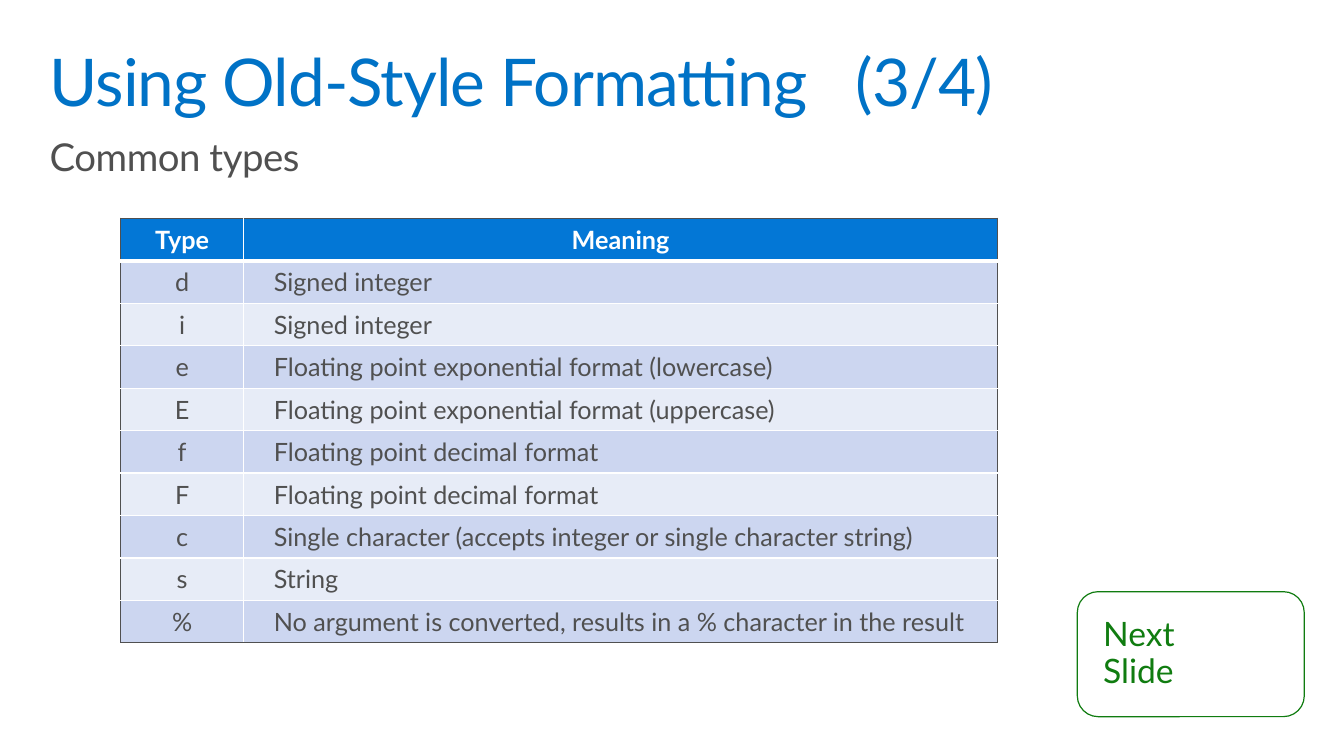
from lxml.etree import SubElement
from pptx import Presentation
from pptx.dml.color import RGBColor
from pptx.enum.shapes import MSO_SHAPE as Shape
from pptx.enum.text import MSO_ANCHOR as Anchor, MSO_AUTO_SIZE as AutoSize, PP_ALIGN as Align
from pptx.oxml.ns import qn
from pptx.util import Cm, Pt

WHITE, GREY, BLUE, GREEN = "FFFFFF", "505050", "0072C6", "107C10"
HEADER, BANDS = "0377D6", ("CCD6F0", "E7ECF7")

TYPES = [
    ("Type", "Meaning"),
    ("d", "Signed integer"),
    ("i", "Signed integer"),
    ("e", "Floating point exponential format (lowercase)"),
    ("E", "Floating point exponential format (uppercase)"),
    ("f", "Floating point decimal format"),
    ("F", "Floating point decimal format"),
    ("c", "Single character (accepts integer or single character string)"),
    ("s", "String"),
    ("%", "No argument is converted, results in a % character in the result"),
]


def colour(code):
    return RGBColor.from_string(code)


def apply(target, **values):
    for name, value in values.items():
        setattr(target, name, value)


class SlideBuilder:
    font = "Lato"

    def __init__(self, page):
        self.page = page

    def add_text(self, para, text, size, code, bold=False, spacing=None):
        para.text = text
        for span in para.runs:
            apply(span.font, name=self.font, size=Pt(size), bold=bold)
            span.font.color.rgb = colour(code)
            if spacing is not None:
                span._r.get_or_add_rPr().set("spc", str(spacing))

    def frame(self, box, side, edge, anchor):
        apply(box.text_frame, word_wrap=True, auto_size=AutoSize.NONE, vertical_anchor=anchor,
              margin_left=Cm(side), margin_right=Cm(side),
              margin_top=Cm(edge), margin_bottom=Cm(edge))
        para = box.text_frame.paragraphs[0]
        apply(para, alignment=Align.LEFT, line_spacing=0.9, space_before=Pt(0))
        return para

    def placeholder(self, box, top, text, size, code, spacing, tab=None):
        apply(box, left=Cm(1), top=Cm(top), width=Cm(31.88), height=Cm(2.24))
        para = self.frame(box, 0.25, 0.25, Anchor.TOP)
        props = para._p.get_or_add_pPr()
        props.set("marL", "0")
        props.set("indent", "0")
        SubElement(props, qn("a:buNone"))
        if tab:
            tabs = SubElement(props, qn("a:tabLst"))
            SubElement(tabs, qn("a:tab"), pos=str(Cm(tab)), algn="r")
        self.add_text(para, text, size, code, spacing=spacing)

    def border(self, cell, side, code, width):
        line = SubElement(cell._tc.get_or_add_tcPr(), qn(f"a:ln{side}"), w=str(Pt(width)))
        SubElement(SubElement(line, qn("a:solidFill")), qn("a:srgbClr"), val=code)

    def table(self, rows, left, top, widths, row_height):
        grid = self.page.shapes.add_table(len(rows), len(widths), Cm(left), Cm(top),
                                          Cm(sum(widths)), Cm(row_height * len(rows))).table
        grid.horz_banding = False
        for column, width in zip(grid.columns, widths):
            column.width = Cm(width)
        last_row, last_col = len(rows) - 1, len(widths) - 1
        for r, texts in enumerate(rows):
            grid.rows[r].height = Cm(row_height)
            for c, text in enumerate(texts):
                cell, head = grid.cell(r, c), r == 0
                apply(cell, vertical_anchor=Anchor.MIDDLE, margin_left=Cm(0.76),
                      margin_right=Cm(0.76), margin_top=Cm(0.15), margin_bottom=Cm(0.15))
                # Grey outer edges, white inner lines, thick line around the header's base
                outer = {"L": c == 0, "R": c == last_col, "T": head, "B": r == last_row}
                for side, is_outer in outer.items():
                    thick = (side == "B" and head) or (side == "T" and r == 1)
                    self.border(cell, side, GREY if is_outer else WHITE, 3 if thick else 1)
                cell.fill.solid()
                cell.fill.fore_color.rgb = colour(HEADER if head else BANDS[(r - 1) % 2])
                para = cell.text_frame.paragraphs[0]
                para.alignment = Align.CENTER if head or c == 0 else Align.LEFT
                self.add_text(para, text, 18, WHITE if head else GREY, bold=head)

    def button(self, left, top, width, height, text):
        box = self.page.shapes.add_shape(Shape.ROUNDED_RECTANGLE, Cm(left), Cm(top),
                                         Cm(width), Cm(height))
        box.shadow.inherit = False
        box.fill.solid()
        box.fill.fore_color.rgb = colour(WHITE)
        box.line.color.rgb = colour(GREEN)
        box.line.width = Pt(0.85)
        self.add_text(self.frame(box, 0.5, 0.4, Anchor.MIDDLE), text, 24, GREEN)


def main():
    deck = Presentation()
    apply(deck, slide_width=Cm(33.87), slide_height=Cm(19.05))
    page = deck.slides.add_slide(deck.slide_layouts[1])
    builder = SlideBuilder(page)

    # Title and subtitle
    builder.placeholder(page.shapes.title, 1, "Using Old-Style Formatting\t(3/4)",
                        47, BLUE, -70, tab=31.12)
    builder.placeholder(page.placeholders[1], 3.23, "Common types", 27.4, GREY, -30)

    # Format types
    builder.table(TYPES, 3.04, 5.5, (3.1, 19), 1.07)

    # Navigation
    builder.button(27.15, 14.91, 5.72, 3.15, "Next \vSlide")

    deck.save("out.pptx")


if __name__ == "__main__":
    main()
